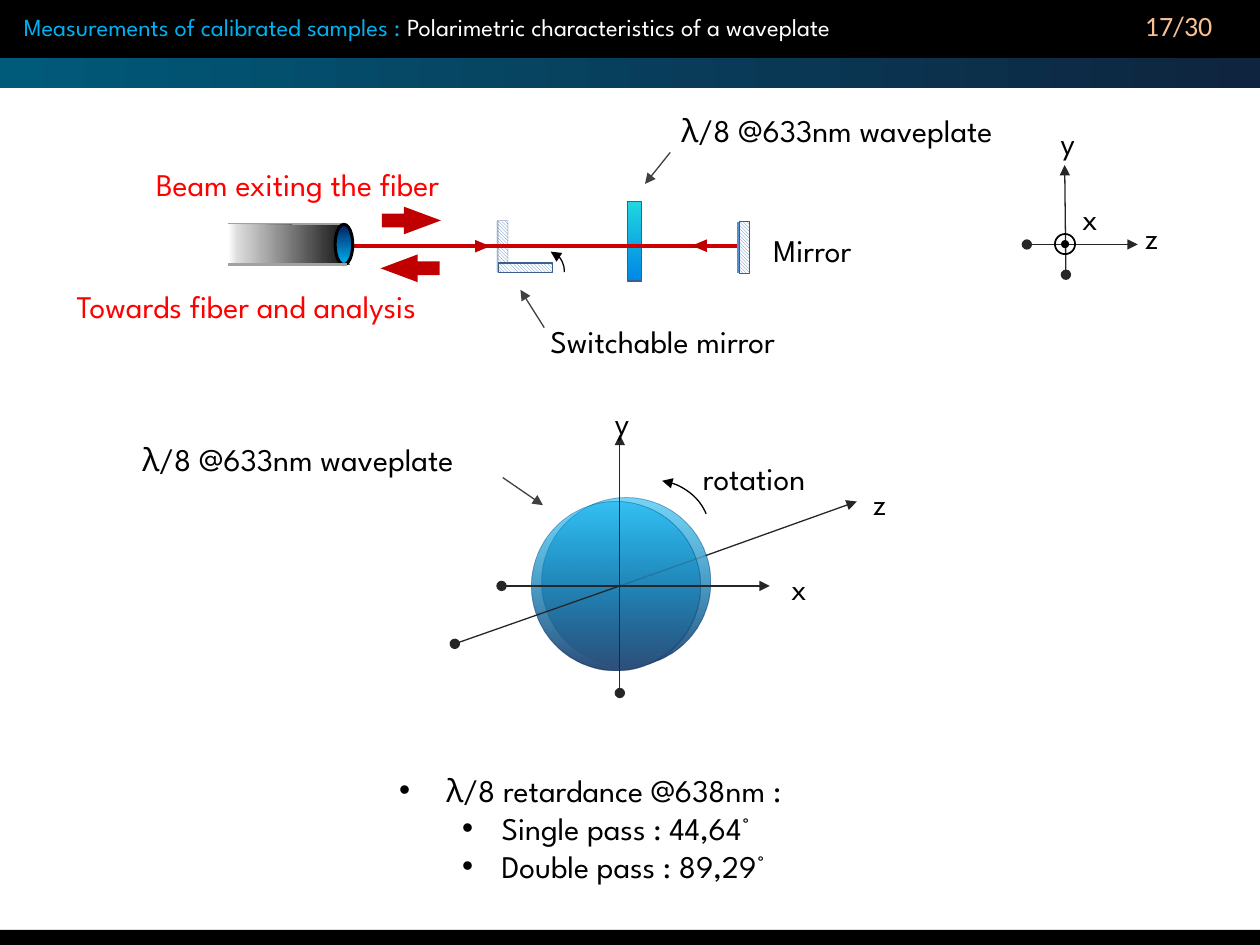
from lxml import etree
from pptx import Presentation
from pptx.dml.color import RGBColor
from pptx.enum.dml import MSO_PATTERN
from pptx.enum.shapes import MSO_CONNECTOR, MSO_SHAPE
from pptx.enum.text import MSO_ANCHOR, MSO_AUTO_SIZE, PP_ALIGN
from pptx.oxml.ns import qn
from pptx.util import Pt

RECT, OVAL, ARC = MSO_SHAPE.RECTANGLE, MSO_SHAPE.OVAL, MSO_SHAPE.ARC
ARROW, WEDGE = MSO_SHAPE.RIGHT_ARROW, MSO_SHAPE.ISOSCELES_TRIANGLE
HATCH = MSO_PATTERN.LIGHT_DOWNWARD_DIAGONAL
STRAIGHT = MSO_CONNECTOR.STRAIGHT
GROW, MIDDLE, RIGHT = MSO_AUTO_SIZE.SHAPE_TO_FIT_TEXT, MSO_ANCHOR.MIDDLE, PP_ALIGN.RIGHT

BLACK = RGBColor(0x00, 0x00, 0x00)
WHITE = RGBColor(0xFF, 0xFF, 0xFF)
RED = RGBColor(0xFF, 0x00, 0x00)
DARK_RED = RGBColor(0xC0, 0x00, 0x00)
BEAM = RGBColor(0xCC, 0x00, 0x00)
SKY = RGBColor(0x00, 0xB0, 0xF0)
NAVY = RGBColor(0x00, 0x20, 0x60)
STEEL = RGBColor(0x2E, 0x50, 0x7A)
TEAL = RGBColor(0x00, 0x5A, 0x7A)
NIGHT = RGBColor(0x0F, 0x24, 0x3E)
CYAN = RGBColor(0x21, 0xD6, 0xE0)
AZURE = RGBColor(0x00, 0x87, 0xE6)
COBALT = RGBColor(0x00, 0x5C, 0xBF)
EDGE = RGBColor(0x3A, 0x5F, 0x8C)
BLUE = RGBColor(0x4F, 0x81, 0xBD)
PALE_BLUE = RGBColor(0x55, 0x8E, 0xD5)
AXIS = RGBColor(0x26, 0x26, 0x26)
POINTER = RGBColor(0x40, 0x40, 0x40)
GREY = RGBColor(0xA1, 0xA1, 0xA1)
COAL = RGBColor(0x0D, 0x0D, 0x0D)
SILVER = RGBColor(0xDC, 0xDC, 0xDC)
PEACH = RGBColor(0xFA, 0xC0, 0x90)
FONT = "League Spartan"


def add_alpha(node, alpha):
    etree.SubElement(node, qn("a:alpha")).set("val", str(alpha * 1000))


def set_line(item, color, width, alpha=None, head=None, tail=None):
    item.line.color.rgb = color
    item.line.width = Pt(width)
    ln = item._element.spPr.find(qn("a:ln"))
    if alpha:
        add_alpha(ln.find(".//" + qn("a:srgbClr")), alpha)
    for tag, kind in (("a:headEnd", head), ("a:tailEnd", tail)):
        if kind:
            etree.SubElement(ln, qn(tag)).set("type", kind)


def set_grad(shape, stops, angle):
    """Stops are (percent, colour) or (percent, colour, opacity)."""
    shape.fill.gradient()
    shape.fill.gradient_angle = (360 - angle) % 360
    group = shape._element.spPr.find(".//" + qn("a:gsLst"))
    for old in list(group):
        group.remove(old)
    for place, color, *alpha in stops:
        stop = etree.SubElement(group, qn("a:gs"), pos=str(place * 1000))
        node = etree.SubElement(stop, qn("a:srgbClr"), val=str(color))
        if alpha:
            add_alpha(node, alpha[0])


def add_shape(slide, kind, box, fill=None, turn=0, adjust=()):
    shape = slide.shapes.add_shape(kind, *map(Pt, box))
    shape.shadow.inherit = False
    shape.rotation = turn
    for i, value in enumerate(adjust):
        shape.adjustments[i] = value
    if fill is None:
        shape.fill.background()
    else:
        shape.fill.solid()
        shape.fill.fore_color.rgb = fill
    shape.line.fill.background()
    return shape


def add_line(slide, ends, color, width, **style):
    line = slide.shapes.add_connector(STRAIGHT, *map(Pt, ends))
    set_line(line, color, width, **style)
    etree.SubElement(line._element.spPr, qn("a:effectLst"))


def add_axis(slide, *ends, head="oval", tail="triangle", alpha=None):
    add_line(slide, ends, AXIS, 0.75, head=head, tail=tail, alpha=alpha)


def add_mirror(slide, box, face, color, turn=0, alpha=None):
    plate = add_shape(slide, RECT, box, WHITE, turn)
    plate.fill.patterned()
    plate.fill.pattern = HATCH
    plate.fill.fore_color.rgb = BLUE
    plate.fill.back_color.rgb = WHITE
    set_line(plate, EDGE, 0.5, alpha)
    add_line(slide, face, color, 1.25, alpha=alpha)


def add_arc(slide, box, adjust):
    arc = add_shape(slide, ARC, box, turn=3.9, adjust=adjust)
    set_line(arc, BLACK, 0.75, head="triangle")


def style_run(run, color, size=18, font=FONT):
    run.font.name = font
    run.font.size = Pt(size)
    run.font.color.rgb = color


def add_text(slide, left, top, width, text, color=BLACK, height=28.8):
    box = slide.shapes.add_textbox(Pt(left), Pt(top), Pt(width), Pt(height))
    frame = box.text_frame
    frame.word_wrap = False
    frame.auto_size = GROW
    frame.text = text
    for para in frame.paragraphs:
        for run in para.runs:
            style_run(run, color)
    return frame


def draw_header(slide):
    add_shape(slide, RECT, (0, 0, 720, 33.8), BLACK)
    band = add_shape(slide, RECT, (0, 33.1, 720, 17.3), TEAL)
    set_grad(band, [(0, TEAL), (100, NIGHT)], 0)
    add_shape(slide, RECT, (-0.7, 531.4, 721.4, 8.6), BLACK)
    title = add_text(slide, 6.5, 3.6, 509.8, "Measurements of calibrated samples : ", height=24.5)
    para = title.paragraphs[0]
    para.add_run().text = "Polarimetric characteristics of a waveplate"
    for run, color in zip(para.runs, (SKY, WHITE)):
        style_run(run, color, 14)
    page = add_text(slide, 532.1, 0, 167.8, "17/30")
    page.word_wrap = True
    page.auto_size = MSO_AUTO_SIZE.NONE
    page.vertical_anchor = MIDDLE
    page.paragraphs[0].alignment = RIGHT
    style_run(page.paragraphs[0].runs[0], PEACH, 16, "Calibri")


def draw_fiber(slide):
    left, top, base = 130.3, 128.2, 151.2
    add_line(slide, (197.3, top, left, top), GREY, 1.75)
    rim = [(196.6, 130.6), (195.1, 131.8), (193.7, 134.6), (193.7, 144),
           (195.1, 146.2), (197.3, 148.3), (200.2, base), (left, base), (left, top)]
    pen = slide.shapes.build_freeform(Pt(198.7), Pt(128.9))
    pen.add_line_segments([(Pt(x), Pt(y)) for x, y in rim], close=True)
    body = pen.convert_to_shape()
    body.shadow.inherit = False
    body.line.fill.background()
    set_grad(body, [(1, COAL), (92, SILVER), (100, WHITE)], 180)
    lens = add_shape(slide, OVAL, (191.5, top, 10.1, base - top), NAVY)
    set_grad(lens, [(0, NAVY), (100, SKY)], 90)
    set_line(lens, BLACK, 1.75)
    add_line(slide, (198, base, left, base), GREY, 1.75)


def draw_bench(slide):
    plate = add_shape(slide, RECT, (358.6, 115.2, 7.9, 45.4), CYAN)
    set_grad(plate, [(0, CYAN), (100, AZURE), (100, COBALT)], 90)
    set_line(plate, EDGE, 0)
    # Mirrors and beam
    add_mirror(slide, (284.4, 126, 5.8, 29.5), (284.4, 126, 284.4, 155.5), EDGE, alpha=31)
    add_line(slide, (166.3, 140.4, 425.5, 140.4), BEAM, 2.5)
    add_mirror(slide, (422.6, 126.7, 5.8, 29.5), (421.9, 126.7, 421.9, 156.2), PALE_BLUE)
    add_shape(slide, WEDGE, (272.2, 136.4, 7.2, 8.6), DARK_RED, 90)
    add_shape(slide, WEDGE, (396, 136.1, 7.2, 8.6), DARK_RED, 270)
    add_mirror(slide, (297.4, 137.5, 5.8, 31), (315.4, 150.5, 284.4, 150.5), EDGE, 90)
    add_arc(slide, (300.2, 143.3, 22.3, 23), (169.766, 0))
    # Beam directions
    for left, top, turn in ((218.2, 118.1, 0), (217.4, 145.4, 180)):
        add_shape(slide, ARROW, (left, top, 33.8, 15.8), DARK_RED, turn, (0.5, 1.341))
    draw_fiber(slide)


def draw_labels(slide):
    for label in ((382.3, 59.8, 208.1, "λ/8 @633nm waveplate"),
                  (434.9, 128.2, 64.1, "Mirror"),
                  (307.4, 180.7, 153.4, "Switchable mirror"),
                  (82.1, 90.7, 192.2, "Beam exiting the fiber", RED),
                  (36.7, 160.6, 223.9, "Towards fiber and analysis", RED),
                  (394.6, 258.5, 75.6, "rotation"),
                  (74.2, 247.7, 208.1, "λ/8 @633nm waveplate")):
        add_text(slide, *label)
    for ends in ((311, 187.2, 297.4, 165.6), (383, 87.1, 368.6, 105.1),
                 (287.3, 272.9, 310.3, 288.7)):
        add_line(slide, ends, POINTER, 0.75, tail="triangle")


def draw_disc(slide):
    for left, top in ((309.6, 284.4), (303.8, 286.6)):
        disc = add_shape(slide, OVAL, (left, top, 96.5, 96.5), SKY)
        set_grad(disc, [(0, SKY, 53), (99, STEEL)], 90)
        set_line(disc, NAVY, 0.25, 42)
    mid = (354.2, 334.8)
    rear = (403.2, 317.5)
    add_axis(slide, 286.6, mid[1], 439.9, mid[1])
    add_axis(slide, mid[0], 396, mid[0], 248.4)
    add_axis(slide, 259.9, 367.9, *mid, tail=None)
    add_axis(slide, *rear, 489.6, 286.6, head=None)
    add_axis(slide, *mid, *rear, head=None, tail=None, alpha=21)
    add_arc(slide, (340.6, 274.3, 64.8, 56.9), (166.165, 203.712))
    for left, top, name in ((445, 321.8, "x"), (344.2, 226.8, "y"), (491.8, 272.9, "z")):
        add_text(slide, left, top, 22.3, name)


def draw_frame(slide):
    add_axis(slide, 609.1, 157, 608.4, 94.3)
    add_axis(slide, 586.8, 139.7, 650.2, 139.7)
    for size, fill in ((11.5, None), (3.6, BLACK)):
        ring = add_shape(slide, OVAL, (608.6 - size / 2, 139.5 - size / 2, size, size), fill)
        set_line(ring, BLACK, 1)
    for left, top, name in ((599, 67, "y"), (647.3, 121, "z"), (611.3, 110.2, "x")):
        add_text(slide, left, top, 22.3, name)


def draw_results(slide):
    lines = " λ/8 retardance @638nm :\nSingle pass : 44,64°\nDouble pass : 89,29°"
    frame = add_text(slide, 221, 437, 253.4, lines, height=94.3)
    for para, level in zip(frame.paragraphs, (0, 1, 1)):
        para.level = level
        props = para._p.get_or_add_pPr()
        props.set("marL", str(Pt(22.5 + 36 * level)))
        props.set("indent", str(Pt(-22.5)))
        etree.SubElement(props, qn("a:buFont"), typeface="Arial")
        etree.SubElement(props, qn("a:buChar"), char="•")


def main():
    deck = Presentation()
    deck.slide_width, deck.slide_height = Pt(720), Pt(540)
    slide = deck.slides.add_slide(deck.slide_layouts[6])
    for draw in (draw_header, draw_bench, draw_disc, draw_labels, draw_frame, draw_results):
        draw(slide)
    deck.save("out.pptx")


if __name__ == "__main__":
    main()
